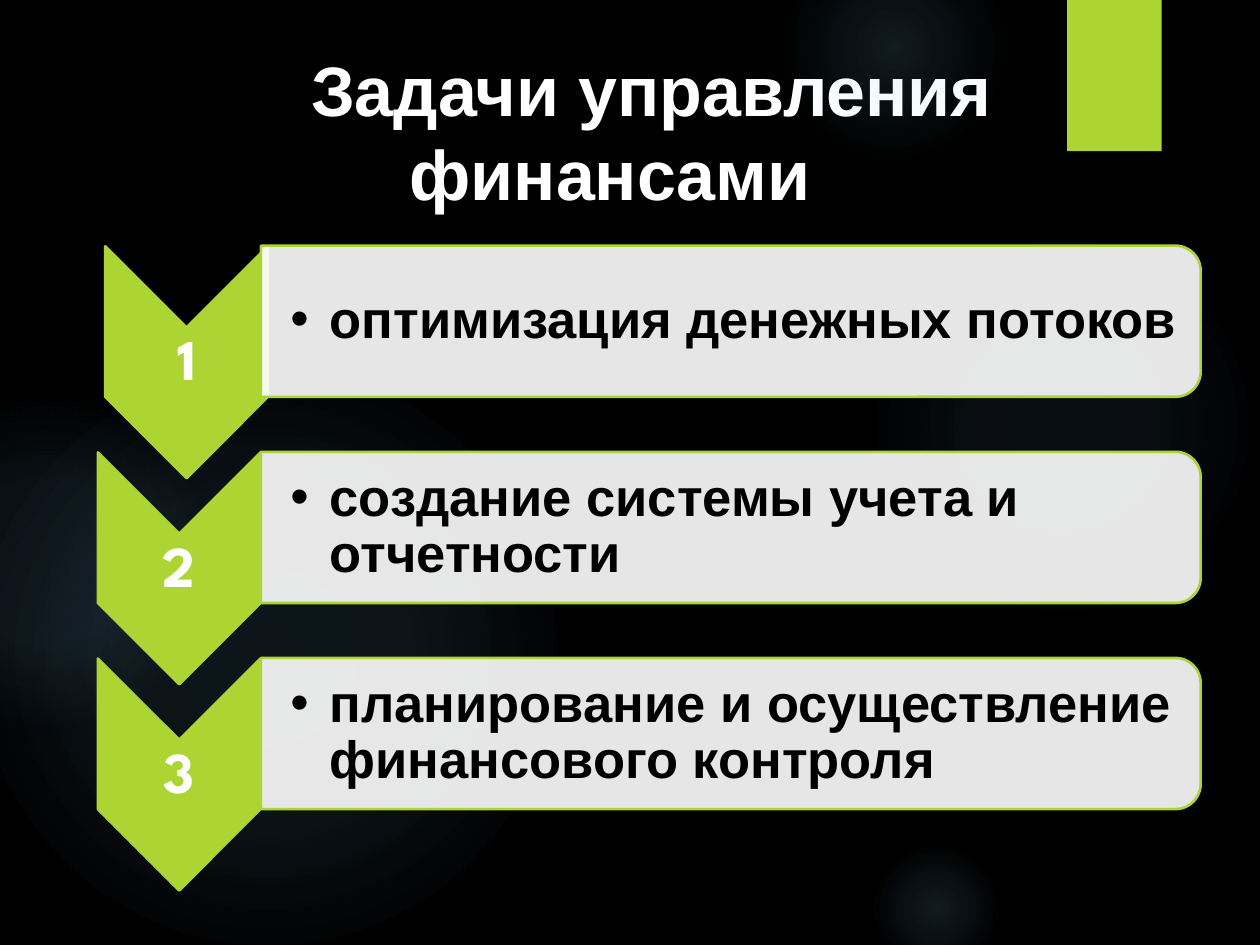
from lxml.etree import SubElement
from pptx import Presentation
from pptx.dml.color import RGBColor
from pptx.enum.shapes import MSO_SHAPE as Shape
from pptx.enum.text import MSO_ANCHOR as Anchor, PP_ALIGN as Align
from pptx.oxml import parse_xml
from pptx.oxml.ns import nsdecls, qn
from pptx.util import Pt

BLACK = RGBColor(0x00, 0x00, 0x00)
WHITE = RGBColor(0xFF, 0xFF, 0xFF)
LIME = RGBColor(0xAC, 0xD4, 0x33)
GLOW_BLUE = RGBColor(0x7A, 0xC4, 0xF0)

TASKS = [
    "оптимизация денежных потоков",
    "создание системы учета и отчетности",
    "планирование и осуществление финансового контроля",
]
# left, top, diameter, opacity at the centre and at 36 %, stop where it fades out
GLOWS = [
    (496, 132, 222, 7, 6, 69),
    (448, -36, 126, 14, 7, 73),
    (496, 480, 78, 14, 7, 66),
    (-12, 210, 330, 11, 10, 75),
    (-66, 228, 186, 8, 8, 72),
]

FIRST_ROW_Y, ROW_PITCH = 183.6, 117.8
PANEL_CENTER_X, PANEL_WIDTH, PANEL_HEIGHT = 417.6, 537, 86.4
CHEVRON_LENGTH, CHEVRON_WIDTH, CHEVRON_DROP = 132.5, 92.9, 23.4
CHEVRON_CENTERS_X = [106.6, 102.4, 102.4]


def add_glow(slide, left, top, diameter, core, middle, fade):
    """Ellipse whose radial gradient fades from the centre to nothing."""
    glow = slide.shapes.add_shape(Shape.OVAL, Pt(left), Pt(top), Pt(diameter), Pt(diameter))
    glow.shadow.inherit = False
    glow.line.fill.background()
    stops = "".join(
        f'<a:gs pos="{position * 1000}"><a:srgbClr val="{GLOW_BLUE}">'
        f'<a:alpha val="{opacity * 1000}"/></a:srgbClr></a:gs>'
        for position, opacity in [(0, core), (36, middle), (fade, 0)]
    )
    gradient = parse_xml(
        f'<a:gradFill {nsdecls("a")} rotWithShape="1"><a:gsLst>{stops}</a:gsLst>'
        '<a:path path="circle"><a:fillToRect l="50000" t="50000" r="50000" b="50000"/>'
        "</a:path></a:gradFill>"
    )
    glow._element.spPr.find(qn("a:prstGeom")).addnext(gradient)


def add_block(slide, kind, center, width, height, fill, rotation=0, opacity=100, outline=True):
    x, y = center
    block = slide.shapes.add_shape(
        kind, Pt(x - width / 2), Pt(y - height / 2), Pt(width), Pt(height))
    block.rotation = rotation
    block.shadow.inherit = False
    block.fill.solid()
    block.fill.fore_color.rgb = fill
    if opacity < 100:
        color = block._element.spPr.find(qn("a:solidFill"))[0]
        SubElement(color, qn("a:alpha"), val=str(opacity * 1000))
    if outline:
        block.line.color.rgb = LIME
        block.line.width = Pt(1.5)
    else:
        block.line.fill.background()


def write(frame, text, *, size, color, font="Arial", align=Align.LEFT, insets=None,
          spacing=1.0, margin=0, indent=0, bullet=False):
    """Fill a text frame; insets are left, top, right and bottom."""
    frame.word_wrap = True
    frame.vertical_anchor = Anchor.MIDDLE
    if insets:
        (frame.margin_left, frame.margin_top,
         frame.margin_right, frame.margin_bottom) = map(Pt, insets)
    paragraph = frame.paragraphs[0]
    paragraph.alignment = align
    paragraph.line_spacing = spacing
    properties = paragraph._p.get_or_add_pPr()
    properties.set("marL", str(Pt(margin)))
    properties.set("indent", str(Pt(indent)))
    if bullet:
        SubElement(properties, qn("a:buFont"), typeface="Arial")
        SubElement(properties, qn("a:buChar"), char="•")
    else:
        SubElement(properties, qn("a:buNone"))
    run = paragraph.add_run()
    run.text = text
    run.font.name = font
    run.font.size = Pt(size)
    run.font.bold = True
    run.font.color.rgb = color


def add_label(slide, text, center, width, height, **style):
    x, y = center
    label = slide.shapes.add_textbox(
        Pt(x - width / 2), Pt(y - height / 2), Pt(width), Pt(height))
    write(label.text_frame, text, spacing=0.9, **style)


def add_title(slide, text):
    title = slide.shapes.title
    title.left, title.top, title.width, title.height = Pt(22.3), Pt(22.3), Pt(663.8), Pt(104.4)
    write(title.text_frame, text, size=40, color=WHITE, align=Align.CENTER, indent=36)


def add_task(slide, number, text, chevron_x, row_y):
    chevron_center = (chevron_x, row_y + CHEVRON_DROP)
    panel_center = (PANEL_CENTER_X, row_y)
    add_block(slide, Shape.CHEVRON, chevron_center, CHEVRON_LENGTH, CHEVRON_WIDTH,
              LIME, rotation=90)
    add_label(slide, str(number), chevron_center, CHEVRON_WIDTH, 39.6, size=33, color=WHITE,
              font="League Spartan", align=Align.CENTER, insets=(1.5, 1.5, 1.5, 1.5))
    add_block(slide, Shape.ROUND_2_SAME_RECTANGLE, panel_center, PANEL_HEIGHT, PANEL_WIDTH,
              WHITE, rotation=90, opacity=90)
    add_label(slide, text, (PANEL_CENTER_X - 2, row_y), PANEL_WIDTH - 4, 77.8, size=30,
              color=BLACK, insets=(16.8, 1.5, 1.5, 1.5), margin=22.5, indent=-22.5, bullet=True)


def main():
    deck = Presentation()
    deck.slide_width, deck.slide_height = Pt(720), Pt(540)
    slide = deck.slides.add_slide(deck.slide_layouts[5])
    slide.background.fill.solid()
    slide.background.fill.fore_color.rgb = BLACK

    for glow in GLOWS:
        add_glow(slide, *glow)
    add_block(slide, Shape.RECTANGLE, (636.8, 43.2), 54, 86.4, LIME, outline=False)
    add_title(slide, "Задачи управления финансами ")
    for row, (text, chevron_x) in enumerate(zip(TASKS, CHEVRON_CENTERS_X)):
        add_task(slide, row + 1, text, chevron_x, FIRST_ROW_Y + row * ROW_PITCH)

    deck.save("out.pptx")


if __name__ == "__main__":
    main()
